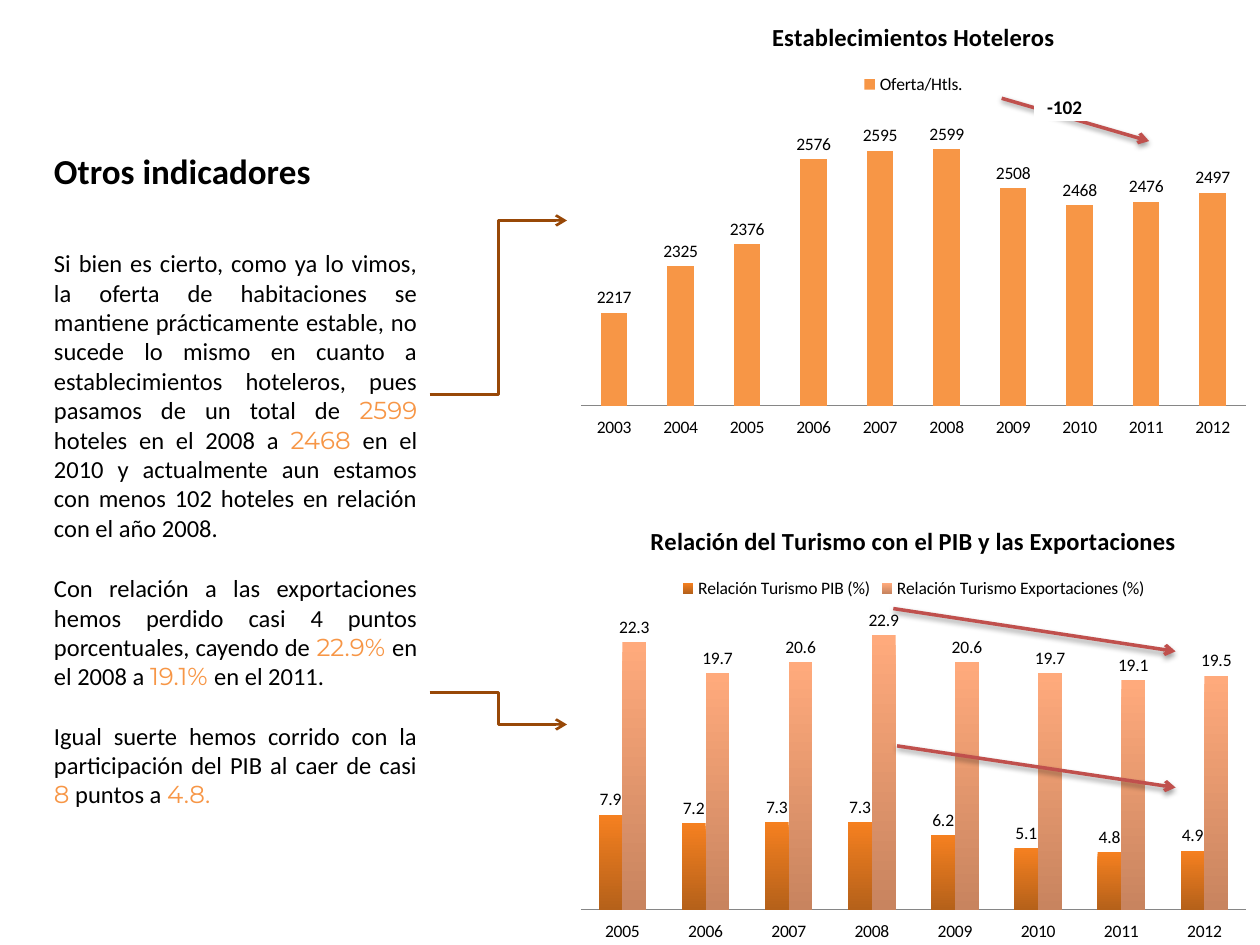
from lxml.etree import SubElement
from pptx import Presentation
from pptx.chart.data import CategoryChartData
from pptx.dml.color import RGBColor
from pptx.enum.chart import XL_CHART_TYPE, XL_LABEL_POSITION, XL_LEGEND_POSITION, XL_TICK_LABEL_POSITION, XL_TICK_MARK
from pptx.enum.shapes import MSO_CONNECTOR, MSO_SHAPE
from pptx.enum.text import MSO_ANCHOR, PP_ALIGN
from pptx.oxml import parse_xml
from pptx.oxml.ns import nsdecls, qn
from pptx.util import Inches, Pt

COLORS = {
    "text": "000000", "white": "FFFFFF", "accent": "F79646", "elbow": "984807",
    "trend": "C0504D", "axis": "868686",
    "gdp_top": "F58020", "gdp_bottom": "B5611A",
    "exports_top": "FFAA7C", "exports_bottom": "C8845F",
}
BODY_FONT, FIGURE_FONT = "Calibri", "Montserrat"

HEADING = [[("Otros indicadores", False)]]
HOTEL_NOTE = [[
    ("Si bien es cierto, como ya lo vimos, la oferta de habitaciones se mantiene "
     "prácticamente estable, no sucede lo mismo en cuanto a establecimientos "
     "hoteleros, pues pasamos de un total de ", False),
    ("2599 ", True), ("hoteles en el 2008 a ", False), ("2468", True),
    (" en el 2010 y actualmente aun estamos con menos 102 hoteles en relación "
     "con el año 2008.", False),
]]
ECONOMY_NOTE = [
    [("Con relación a las exportaciones hemos perdido casi 4 puntos porcentuales, "
      "cayendo de ", False),
     ("22.9% ", True), ("en el 2008 a ", False), ("19.1% ", True), ("en el 2011.", False)],
    [("Igual suerte hemos corrido con la participación del PIB al caer de casi ", False),
     ("8", True), (" puntos a ", False), ("4.8.", True)],
]
HOTELS = {
    "title": "Establecimientos Hoteleros", "years": range(2003, 2013),
    "format": "0", "scale": (2000, 2700),
    "series": [("Oferta/Htls.",
                [2217, 2325, 2376, 2576, 2595, 2599, 2508, 2468, 2476, 2497], ["accent"])],
}
ECONOMY = {
    "title": "Relación del Turismo con el PIB y las Exportaciones", "years": range(2005, 2013),
    "format": "0.0", "scale": (0, 25),
    "series": [
        ("Relación Turismo PIB (%)",
         [7.9, 7.2, 7.3, 7.3, 6.2, 5.1, 4.8, 4.9], ["gdp_top", "gdp_bottom"]),
        ("Relación Turismo Exportaciones (%)",
         [22.3, 19.7, 20.6, 22.9, 20.6, 19.7, 19.1, 19.5], ["exports_top", "exports_bottom"]),
    ],
}
PLOT_AREA = {"x": 0.02, "y": 0.24, "w": 0.96, "h": 0.68}
TRENDS = [(7.95, 0.78, 9.12, 1.12), (7.12, 5.92, 9.33, 6.25), (7.09, 4.83, 9.33, 5.17)]


def color(name):
    return RGBColor.from_string(COLORS[name])


def style_font(font, size, bold=False, name=BODY_FONT, tone="text"):
    font.size, font.bold, font.name = Pt(size), bold, name
    font.color.rgb = color(tone)


def write_text(shape, paragraphs, size=14, bold=False, align=PP_ALIGN.LEFT,
               anchor=MSO_ANCHOR.TOP, gap=0):
    frame = shape.text_frame
    frame.word_wrap = True
    frame.vertical_anchor = anchor
    for index, runs in enumerate(paragraphs):
        paragraph = frame.add_paragraph() if index else frame.paragraphs[0]
        paragraph.alignment = align
        paragraph.space_before = Pt(gap if index else 0)
        for text, is_figure in runs:
            run = paragraph.add_run()
            run.text = text
            style_font(run.font, size, bold, FIGURE_FONT if is_figure else BODY_FONT,
                       "accent" if is_figure else "text")


def add_note(slide, box, paragraphs, **text_format):
    note = slide.shapes.add_textbox(*map(Inches, box))
    write_text(note, paragraphs, **text_format)
    return note


def paint_series(series, tones):
    fill = series.format.fill
    if len(tones) == 1:
        fill.solid()
        fill.fore_color.rgb = color(tones[0])
        return
    fill.gradient()
    fill.gradient_angle = 270
    for stop, tone in zip(fill.gradient_stops, tones):
        stop.color.rgb = color(tone)


def add_columns(slide, top, content):
    data = CategoryChartData(number_format=content["format"])
    data.categories = [str(year) for year in content["years"]]
    for name, values, _ in content["series"]:
        data.add_series(name, values)
    frame = slide.shapes.add_chart(XL_CHART_TYPE.COLUMN_CLUSTERED, Inches(4.5), Inches(top),
                                   Inches(5.5), Inches(3.5), data)
    chart = frame.chart
    style_font(chart.font, 10)
    chart.has_title = True
    title = chart.chart_title.text_frame
    title.text = content["title"]
    style_font(title.paragraphs[0].runs[0].font, 14, True)
    chart.has_legend = True
    chart.legend.position = XL_LEGEND_POSITION.TOP
    chart.legend.include_in_layout = False

    years_axis, values_axis = chart.category_axis, chart.value_axis
    years_axis.major_tick_mark = XL_TICK_MARK.NONE
    years_axis.tick_label_position = XL_TICK_LABEL_POSITION.LOW
    years_axis.format.line.color.rgb = color("axis")
    values_axis.visible = False
    values_axis.has_major_gridlines = False
    values_axis.minimum_scale, values_axis.maximum_scale = content["scale"]

    plot = chart.plots[0]
    plot.gap_width, plot.overlap, plot.vary_by_categories = 150, 0, False
    plot.has_data_labels = True
    labels = plot.data_labels
    labels.show_value = True
    labels.number_format, labels.number_format_is_linked = content["format"], False
    labels.position = XL_LABEL_POSITION.OUTSIDE_END
    style_font(labels.font, 10)
    for series, (_, _, tones) in zip(plot.series, content["series"]):
        paint_series(series, tones)

    plot_area = chart._chartSpace.chart.plotArea
    for old_layout in plot_area.findall(qn("c:layout")):
        plot_area.remove(old_layout)
    sides = "".join(f'<c:{side} val="{value}"/>' for side, value in PLOT_AREA.items())
    plot_area.insert(0, parse_xml(
        f'<c:layout {nsdecls("c")}><c:manualLayout><c:layoutTarget val="inner"/>'
        f'<c:xMode val="edge"/><c:yMode val="edge"/>{sides}</c:manualLayout></c:layout>'))
    return frame


def add_arrow(slide, kind, ends, tone, width, shadow=False):
    arrow = slide.shapes.add_connector(kind, *map(Inches, ends))
    arrow.line.color.rgb = color(tone)
    arrow.line.width = Pt(width)
    SubElement(arrow.line._get_or_add_ln(), qn("a:tailEnd"), type="arrow")
    effects = SubElement(arrow._element.spPr, qn("a:effectLst"))
    if shadow:
        cast = SubElement(effects, qn("a:outerShdw"), blurRad=str(Pt(3.1)),
                          dist=str(Pt(1.6)), dir="5400000", rotWithShape="0")
        shade = SubElement(cast, qn("a:srgbClr"), val=COLORS["text"])
        SubElement(shade, qn("a:alpha"), val="38000")
    return arrow


def main():
    deck = Presentation()
    deck.slide_width, deck.slide_height = Inches(10), Inches(7.5)
    slide = deck.slides.add_slide(deck.slide_layouts[6])

    add_note(slide, (0.33, 0.3, 3.29, 1.27), HEADING, size=20, bold=True,
             anchor=MSO_ANCHOR.BOTTOM)
    hotel_note = add_note(slide, (0.33, 1.92, 3.08, 2.42), HOTEL_NOTE, align=PP_ALIGN.JUSTIFY)
    economy_note = add_note(slide, (0.33, 4.5, 3.08, 1.99), ECONOMY_NOTE,
                            align=PP_ALIGN.JUSTIFY, gap=17)
    economy_chart = add_columns(slide, 4, ECONOMY)
    hotel_chart = add_columns(slide, 0, HOTELS)

    for note, chart, ends in [(hotel_note, hotel_chart, (3.41, 3.13, 4.5, 1.75)),
                              (economy_note, economy_chart, (3.41, 5.5, 4.5, 5.75))]:
        elbow = add_arrow(slide, MSO_CONNECTOR.ELBOW, ends, "elbow", 1.5)
        elbow.begin_connect(note, 3)
        elbow.end_connect(chart, 1)

    hotel_trend, *economy_trends = TRENDS
    add_arrow(slide, MSO_CONNECTOR.STRAIGHT, hotel_trend, "trend", 2, shadow=True)
    drop = slide.shapes.add_shape(MSO_SHAPE.RECTANGLE, *map(Inches, (8.21, 0.73, 0.48, 0.23)))
    drop.shadow.inherit = False
    drop.fill.solid()
    drop.fill.fore_color.rgb = color("white")
    drop.line.color.rgb = color("white")
    drop.line.width = Pt(0.75)
    write_text(drop, [[("-102", False)]], size=11, bold=True, align=PP_ALIGN.CENTER,
               anchor=MSO_ANCHOR.MIDDLE)
    for ends in economy_trends:
        add_arrow(slide, MSO_CONNECTOR.STRAIGHT, ends, "trend", 2, shadow=True)

    deck.save("out.pptx")


if __name__ == "__main__":
    main()
